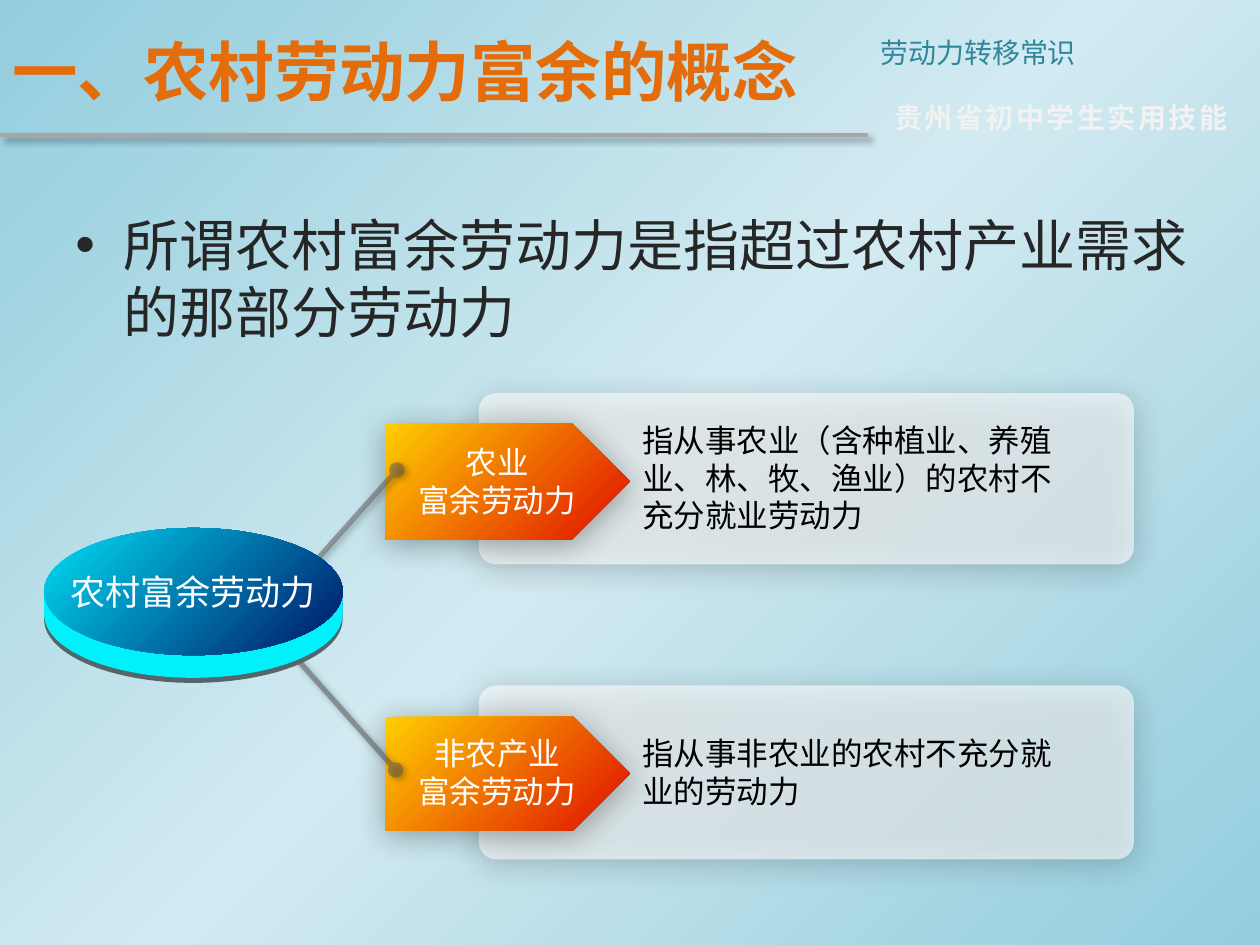
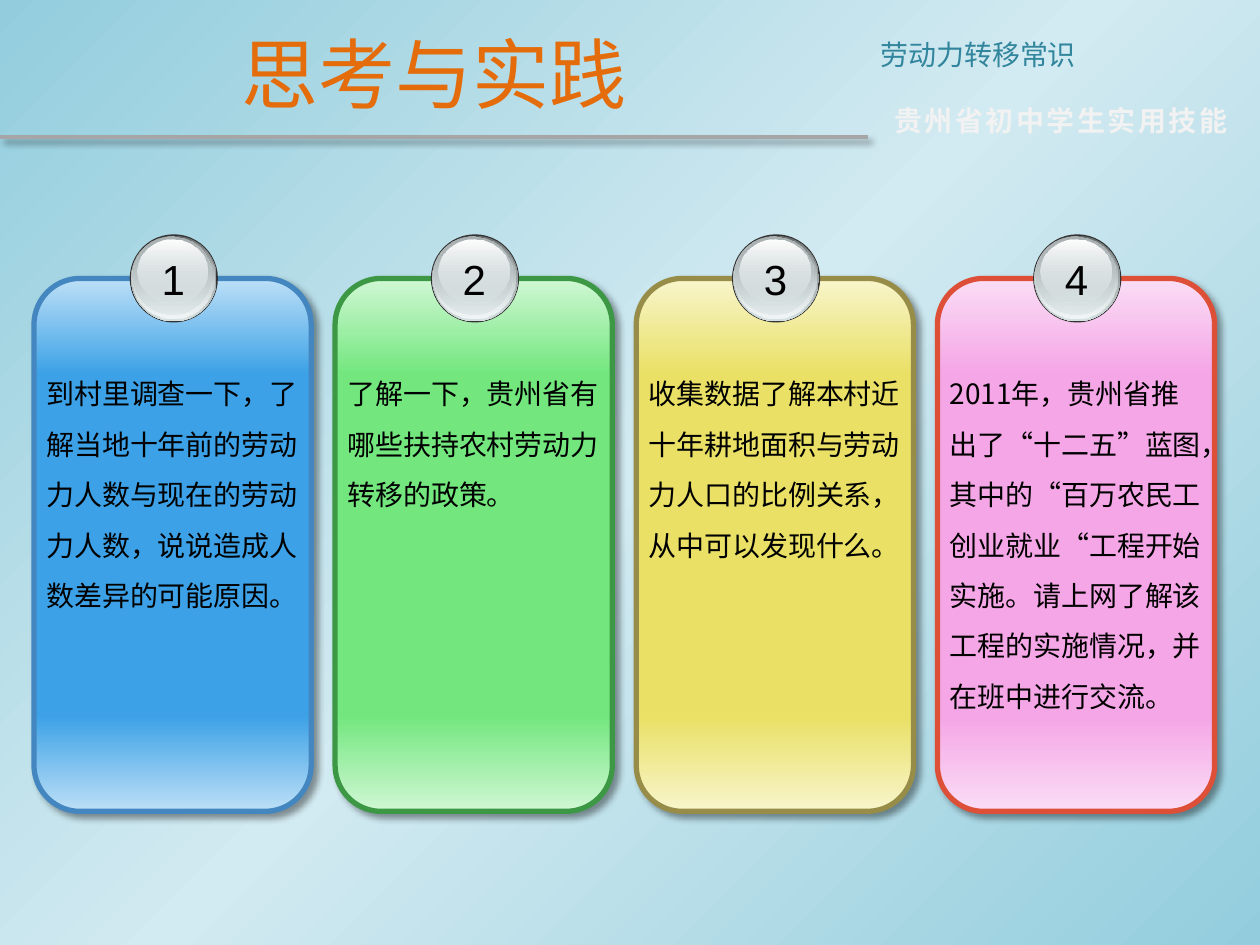
import math

import pptx
import pptx.dml.color
import pptx.enum.shapes
import pptx.enum.text
import pptx.util
from lxml import etree
from pptx.oxml import ns

Inches = pptx.util.Inches
Pt = pptx.util.Pt
RGB = pptx.dml.color.RGBColor
SHAPE = pptx.enum.shapes.MSO_SHAPE
ALIGN = pptx.enum.text.PP_ALIGN
ANCHOR = pptx.enum.text.MSO_ANCHOR

CJK = "Noto Sans CJK SC"
BLACK = RGB(0x00, 0x00, 0x00)
WHITE = RGB(0xFF, 0xFF, 0xFF)
INK = RGB(0x26, 0x26, 0x26)
ORANGE = RGB(0xE4, 0x6C, 0x0A)
TEAL = RGB(0x31, 0x85, 0x9C)
PALE = RGB(0xF2, 0xF2, 0xF2)
RULE_GREY = RGB(0xA6, 0xA6, 0xA6)
LINK_GREY = RGB(0x59, 0x59, 0x59)
SKY = RGB(0x93, 0xCD, 0xDD)
SKY_LIGHT = RGB(0xD2, 0xEA, 0xF1)
YELLOW = RGB(0xFF, 0xCF, 0x01)
RED = RGB(0xE2, 0x20, 0x00)
DISC_LIGHT = RGB(0x00, 0xDF, 0xF6)
DISC_DARK = RGB(0x00, 0x27, 0x74)
DISC_EDGE = RGB(0x00, 0xF0, 0xFC)
DISC_BASE = RGB(0x55, 0x66, 0x6B)
RIM = RGB(0x33, 0x33, 0x33)
STEEL = RGB(0x63, 0x68, 0x69)
SILVER = RGB(0xAA, 0xB2, 0xB3)
MIST = RGB(0xD6, 0xE1, 0xE2)
FROST = RGB(0xF1, 0xF5, 0xF5)

# Shadows: opacity %, blur pt, distance pt, direction in degrees
SOFT = (33, 17.8, 3, 87)
CRISP = (40, 4, 3, 45)
LINK = (50, 4, 2, 45)

# Badge layers: left and top inside the badge, width, height, gradient
BADGE_LAYERS = [
    (0, 0, 0.7, 0.7, RIM),
    (0.01, 0.01, 0.68, 0.68, [(0, STEEL, 100), (100, MIST, 100)]),
    (0.01, 0.01, 0.66, 0.66, [(0, MIST, 0), (100, FROST, 100)]),
    (0.02, 0.02, 0.63, 0.62, [(0, SILVER, 100), (100, MIST, 48)]),
    (0.06, 0.04, 0.56, 0.5, [(0, WHITE, 100), (100, MIST, 38)]),
]

# Tasks: edge shade, body shade, outline, text
TASKS = [
    (RGB(0xBD, 0xE0, 0xF7), RGB(0x3C, 0xA1, 0xE6), RGB(0x44, 0x86, 0xBF),
     "到村里调查一下，了解当地十年前的劳动力人数与现在的劳动力人数，说说造成人数差异的可能原因。"),
    (RGB(0xD0, 0xF7, 0xD4), RGB(0x73, 0xE7, 0x7E), RGB(0x3C, 0x98, 0x44),
     "了解一下，贵州省有哪些扶持农村劳动力转移的政策。"),
    (RGB(0xF8, 0xF5, 0xCC), RGB(0xE9, 0xE0, 0x65), RGB(0x97, 0x8D, 0x48),
     "收集数据了解本村近十年耕地面积与劳动力人口的比例关系，从中可以发现什么。"),
    (RGB(0xFB, 0xDD, 0xF5), RGB(0xF4, 0xA6, 0xE6), RGB(0xDD, 0x4F, 0x37),
     "2011年，贵州省推出了“十二五”蓝图，其中的“百万农民工创业就业“工程开始实施。"
     "请上网了解该工程的实施情况，并在班中进行交流。"),
]


def add_node(parent, tag, **attributes):
    node = etree.SubElement(parent, ns.qn(tag))
    for name, value in attributes.items():
        node.set(name, str(value))
    return node


def set_opacity(color_node, percent):
    add_node(color_node, "a:alpha", val=round(percent * 1000))


def set_gradient(fill, owner, stops, angle):
    """Fill with (position %, colour, opacity %) stops, angle clockwise."""
    fill.gradient()
    gradient = owner.find(".//" + ns.qn("a:gradFill"))
    for child in list(gradient):
        gradient.remove(child)
    stop_list = add_node(gradient, "a:gsLst")
    for position, color, opacity in stops:
        stop = add_node(stop_list, "a:gs", pos=position * 1000)
        color_node = add_node(stop, "a:srgbClr", val=color)
        if opacity < 100:
            set_opacity(color_node, opacity)
    add_node(gradient, "a:lin", ang=angle * 60000, scaled=0)


def set_shadow(shape, shadow):
    properties = shape.element.spPr
    effects = properties.find(ns.qn("a:effectLst"))
    if effects is None:
        effects = add_node(properties, "a:effectLst")
    if shadow:
        opacity, blur, distance, direction = shadow
        outer = add_node(effects, "a:outerShdw", blurRad=Pt(blur), dist=Pt(distance),
                         dir=direction * 60000, algn="ctr", rotWithShape=0)
        set_opacity(add_node(outer, "a:srgbClr", val=BLACK), opacity)


def paint(shape, fill, angle=90, shadow=None):
    """Fill a shape with a colour or with gradient stops, without outline."""
    if isinstance(fill, list):
        set_gradient(shape.fill, shape.element, fill, angle)
    else:
        shape.fill.solid()
        shape.fill.fore_color.rgb = fill
    shape.line.fill.background()
    shape.shadow.inherit = False
    set_shadow(shape, shadow)
    return shape


def add_figure(slide, kind, left, top, width, height, fill, angle=90, shadow=None):
    figure = slide.shapes.add_shape(kind, Inches(left), Inches(top),
                                    Inches(width), Inches(height))
    return paint(figure, fill, angle, shadow)


def add_text(slide, left, top, width, height, lines, size, color, font=CJK, bold=False,
             align=ALIGN.LEFT, anchor=ANCHOR.TOP, spacing=None, wrap=True):
    box = slide.shapes.add_textbox(Inches(left), Inches(top), Inches(width), Inches(height))
    frame = box.text_frame
    frame.word_wrap = wrap
    frame.vertical_anchor = anchor
    for index, line in enumerate(lines):
        paragraph = frame.paragraphs[0] if index == 0 else frame.add_paragraph()
        paragraph.alignment = align
        if spacing:
            paragraph.line_spacing = spacing
        run = paragraph.add_run()
        run.text = line
        run.font.name = font
        run.font.size = Pt(size)
        run.font.bold = bold
        run.font.color.rgb = color
        add_node(run.font._element, "a:ea", typeface=font)
    return frame


def add_line(slide, start, end, color, width, shadow, opacity=100, ends=None):
    line = slide.shapes.add_connector(pptx.enum.shapes.MSO_CONNECTOR.STRAIGHT,
                                      *map(Inches, start + end))
    line.line.color.rgb = color
    line.line.width = Pt(width)
    outline = line.element.spPr.find(ns.qn("a:ln"))
    if opacity < 100:
        set_opacity(outline.find(".//" + ns.qn("a:srgbClr")), opacity)
    if ends:
        add_node(outline, "a:headEnd", type=ends)
        add_node(outline, "a:tailEnd", type=ends)
    set_shadow(line, shadow)


def start_slide(deck, title, size, bold, align, drop=0.0):
    """Add a slide with the shared background and header, moved down by drop."""
    slide = deck.slides.add_slide(deck.slide_layouts[6])
    set_gradient(slide.background.fill, slide.element,
                 [(0, SKY, 100), (50, SKY_LIGHT, 100), (100, SKY, 100)], 45)
    add_line(slide, (0, 1.07 + drop), (6.89, 1.07 + drop), RULE_GREY, 2.25, CRISP)
    add_text(slide, 6.89, 0.23 + drop, 3.11, 0.37, ["劳动力转移常识"], 16, TEAL,
             align=ALIGN.JUSTIFY)
    series = add_text(slide, 7, 0.75 + drop, 3, 0.37, ["贵州省初中学生实用技能"], 16, PALE,
                      bold=True)
    series.paragraphs[0].runs[0].font._element.set("spc", "150")
    add_text(slide, 0, 0.05 + drop, 6.89, 1.02, [title], size, ORANGE, bold=bold,
             align=align, anchor=ANCHOR.MIDDLE)
    return slide


def add_bullet(slide, text):
    frame = add_text(slide, 0.5, 1.62, 9.07, 1.21, [text], 32, INK)
    properties = frame.paragraphs[0]._p.get_or_add_pPr()
    properties.set("marL", str(Inches(0.38)))
    properties.set("indent", str(-Inches(0.38)))
    add_node(properties, "a:buFont", typeface="Arial")
    add_node(properties, "a:buChar", char="•")


def add_branch(slide, panel, meaning_top, meaning, arrow, label_top, label, link):
    """Add a panel (top, height) with its meaning, an arrow label and a link."""
    top, height = panel
    card = add_figure(slide, SHAPE.ROUNDED_RECTANGLE, 3.8, top, 5.2, height, WHITE, shadow=SOFT)
    card.adjustments[0] = 0.1
    set_opacity(card.element.spPr.find(".//" + ns.qn("a:srgbClr")), 60)
    add_text(slide, 5, meaning_top, 3.62, 0.71, [meaning], 18, BLACK)
    top, height = arrow
    add_figure(slide, SHAPE.PENTAGON, 3.06, top, 1.94, height,
               [(0, YELLOW, 100), (90, RED, 100)], 45, SOFT)
    add_text(slide, 3.2, label_top, 1.49, 0.71, [label, "富余劳动力"], 18, WHITE,
             align=ALIGN.CENTER)
    add_line(slide, *link, LINK_GREY, 3, LINK, opacity=50, ends="oval")


def add_disc(slide, left, top, width, height, text):
    """Add a tilted disc: two lower rims beneath an elliptical face."""
    middle_x, middle_y = left + width / 2, top + height / 2
    for depth, color in ((0.22, DISC_BASE), (0.18, DISC_EDGE)):
        rim = [(middle_x + width / 2 * math.cos(math.radians(degree)),
                middle_y + depth + height / 2 * math.sin(math.radians(degree)))
               for degree in range(0, 181, 4)]
        points = [(left, middle_y), (left + width, middle_y)] + rim
        points = [(Inches(x), Inches(y)) for x, y in points]
        builder = slide.shapes.build_freeform(*points[0])
        builder.add_line_segments(points[1:], close=True)
        paint(builder.convert_to_shape(), color)
    add_figure(slide, SHAPE.OVAL, left, top, width, height,
               [(0, DISC_LIGHT, 100), (90, DISC_DARK, 100)], 45)
    add_text(slide, left, middle_y - 0.22, width, 0.44, [text], 20, WHITE, align=ALIGN.CENTER)


def add_task(slide, number, left, edge, body, outline, text):
    stops = [(0, edge, 100), (18, body, 100), (82, body, 100), (100, edge, 100)]
    card = add_figure(slide, SHAPE.ROUNDED_RECTANGLE, left, 2.21, 2.2, 4.23, stops, shadow=CRISP)
    card.line.color.rgb = outline
    card.line.width = Pt(3)
    add_text(slide, left, 2.81, 2.2, 2.88, [text], 16, BLACK, spacing=1.5)
    for x, y, width, height, fill in BADGE_LAYERS:
        add_figure(slide, SHAPE.OVAL, left + 0.76 + x, 1.86 + y, width, height, fill)
    add_text(slide, left + 0.91, 1.96, 0.39, 0.5, [str(number)], 24, BLACK, font="Arial",
             align=ALIGN.CENTER, wrap=False)


def main():
    deck = pptx.Presentation()
    deck.slide_width, deck.slide_height = Inches(10), Inches(7.5)

    concept = start_slide(deck, "一、农村劳动力富余的概念", 37.4, True, ALIGN.LEFT)
    add_bullet(concept, "所谓农村富余劳动力是指超过农村产业需求的那部分劳动力")
    add_branch(concept, (3.12, 1.36), 3.29,
               "指从事农业（含种植业、养殖业、林、牧、渔业）的农村不充分就业劳动力",
               (3.36, 0.92), 3.47, "农业", ((2.16, 4.84), (3.15, 3.73)))
    add_branch(concept, (5.44, 1.38), 5.78, "指从事非农业的农村不充分就业的劳动力",
               (5.69, 0.9), 5.78, "非农产业", ((2.16, 5.01), (3.14, 6.11)))
    add_disc(concept, 0.35, 4.19, 2.37, 1.01, "农村富余劳动力")

    practice = start_slide(deck, "思考与实践", 44, False, ALIGN.CENTER, drop=0.02)
    for index, task in enumerate(TASKS):
        add_task(practice, index + 1, 0.27 + 2.39 * index, *task)

    deck.save("out.pptx")


if __name__ == "__main__":
    main()
